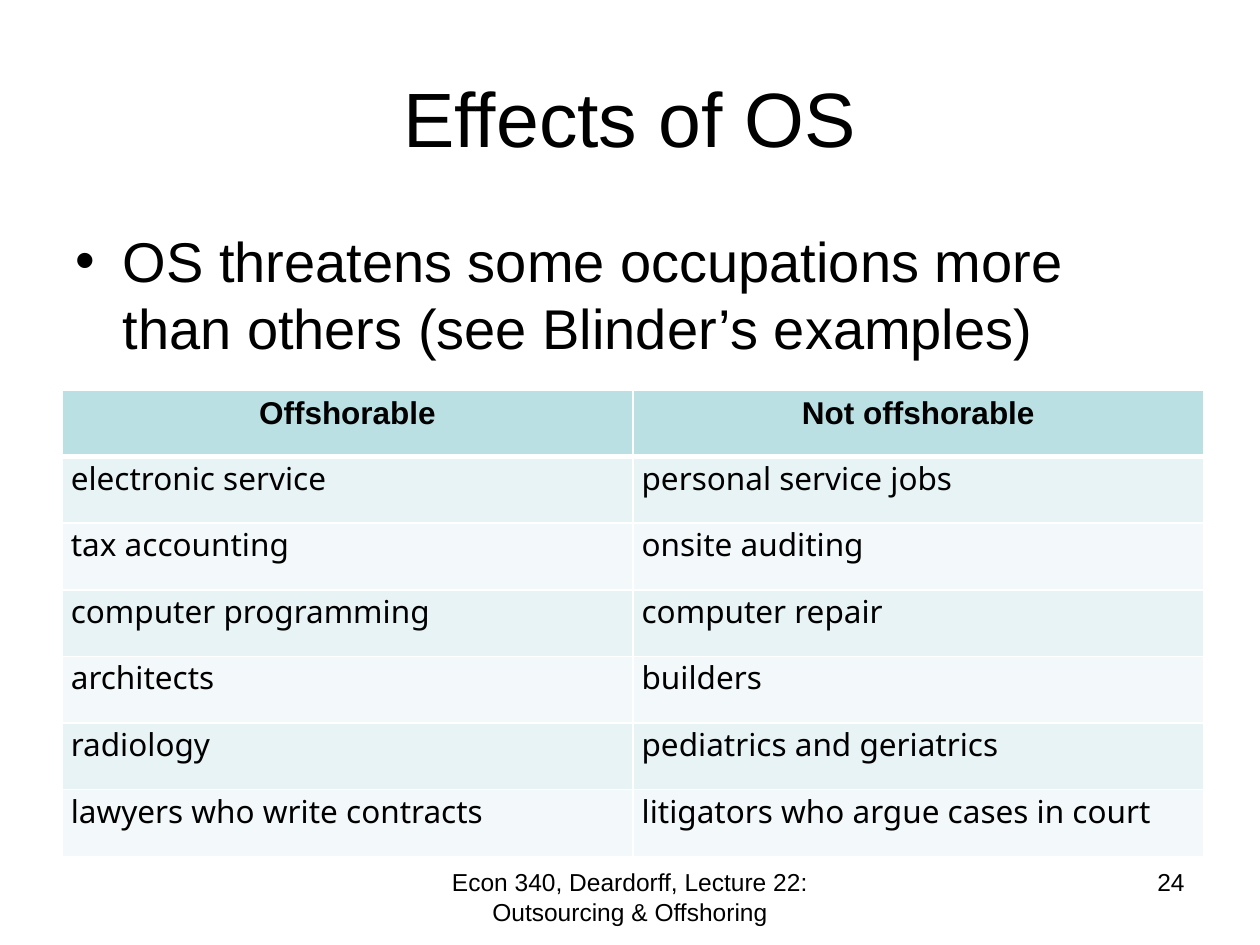
from lxml import etree
from pptx import Presentation
from pptx.dml.color import RGBColor
from pptx.enum.text import MSO_ANCHOR, PP_ALIGN
from pptx.oxml.ns import qn
from pptx.util import Pt

LEFT, CENTER, RIGHT = PP_ALIGN.LEFT, PP_ALIGN.CENTER, PP_ALIGN.RIGHT
TOP, MIDDLE = MSO_ANCHOR.TOP, MSO_ANCHOR.MIDDLE
COLORS = {"text": "000000", "border": "FFFFFF", "header": "BBE0E3",
          "odd": "E7F3F4", "even": "F3F9FA"}
JOBS = [
    ("Offshorable", "Not offshorable"),
    ("electronic service", "personal service jobs"),
    ("tax accounting", "onsite auditing"),
    ("computer programming", "computer repair"),
    ("architects", "builders"),
    ("radiology", "pediatrics and geriatrics"),
    ("lawyers who write contracts", "litigators who argue cases in court"),
]


def set_text(tf, text, size, align=LEFT, font="Arial", bold=False):
    """Fill a text frame with one formatted paragraph and return it."""
    tf.text = text
    tf.word_wrap = True
    p = tf.paragraphs[0]
    p.alignment = align
    f = p.runs[0].font
    f.name, f.size, f.bold = font, Pt(size), bold
    f.color.rgb = RGBColor.from_string(COLORS["text"])
    return p


def add_title(s, box, text):
    """Place the title placeholder in the box."""
    sp = s.shapes.title
    sp.left, sp.top, sp.width, sp.height = map(Pt, box)
    set_text(sp.text_frame, text, 44, CENTER)
    sp.text_frame.vertical_anchor = MIDDLE


def add_text(s, box, text, size, align=LEFT):
    """Add a text box and return its paragraph."""
    tf = s.shapes.add_textbox(*map(Pt, box)).text_frame
    tf.vertical_anchor = TOP
    return set_text(tf, text, size, align)


def add_bullet(s, box, text):
    """Add a bulleted statement with a hanging indent."""
    p = add_text(s, box, text, 32)
    p.space_before = Pt(6.4)
    pPr = p._p.get_or_add_pPr()
    pPr.set("marL", str(Pt(27)))
    pPr.set("indent", str(-Pt(27)))
    etree.SubElement(pPr, qn("a:buFont")).set("typeface", "Arial")
    etree.SubElement(pPr, qn("a:buChar")).set("char", "•")


def set_borders(cell, widths):
    """Draw the cell borders, given as a width for each side."""
    tcPr = cell._tc.get_or_add_tcPr()
    for i, (side, width) in enumerate(widths.items()):
        ln = etree.Element(qn(f"a:ln{side}"), w=str(Pt(width)))
        fill = etree.SubElement(ln, qn("a:solidFill"))
        etree.SubElement(fill, qn("a:srgbClr")).set("val", COLORS["border"])
        tcPr.insert(i, ln)


def add_jobs_table(s, box, rows):
    """Add the two-column table of occupations with a header row."""
    left, top, width, height = box
    table = s.shapes.add_table(len(rows), len(rows[0]), *map(Pt, box)).table
    for col in table.columns:
        col.width = Pt(width / len(rows[0]))
    for i, row in enumerate(rows):
        table.rows[i].height = Pt(height / len(rows))
        header = i == 0
        shade = "header" if header else "odd" if i % 2 else "even"
        for j, text in enumerate(row):
            cell = table.cell(i, j)
            cell.fill.solid()
            cell.fill.fore_color.rgb = RGBColor.from_string(COLORS[shade])
            set_borders(cell, {"L": 1, "R": 1, "T": 3 if i == 1 else 1,
                               "B": 3 if header else 1})
            if header:
                set_text(cell.text_frame, text, 18, CENTER, bold=True)
            else:
                cell.margin_left = cell.margin_right = Pt(5)
                cell.margin_top = cell.margin_bottom = Pt(0)
                set_text(cell.text_frame, text, 18, font="Noto Sans")


def add_footer(s, box, text, number):
    """Add the centred lecture name and the page number at the right."""
    left, top, width, height = box
    add_text(s, (left + 210, top, 228, height), text, 14, CENTER)
    add_text(s, (left + width - 168, top, 168, height), number, 14, RIGHT)


def main():
    """Build the slide and save it."""
    prs = Presentation()
    prs.slide_width, prs.slide_height = Pt(720), Pt(540)
    s = prs.slides.add_slide(prs.slide_layouts[5])
    add_footer(s, (36, 492, 648, 37.5),
               "Econ 340, Deardorff, Lecture 22: Outsourcing & Offshoring", "24")
    add_title(s, (36, 21.6, 648, 90), "Effects of OS")
    add_bullet(s, (36, 126, 648, 356.4),
               "OS threatens some occupations more than others "
               "(see Blinder’s examples)")
    add_jobs_table(s, (35.5, 222.8, 652.4, 266.6), JOBS)
    prs.save("out.pptx")


if __name__ == "__main__":
    main()
